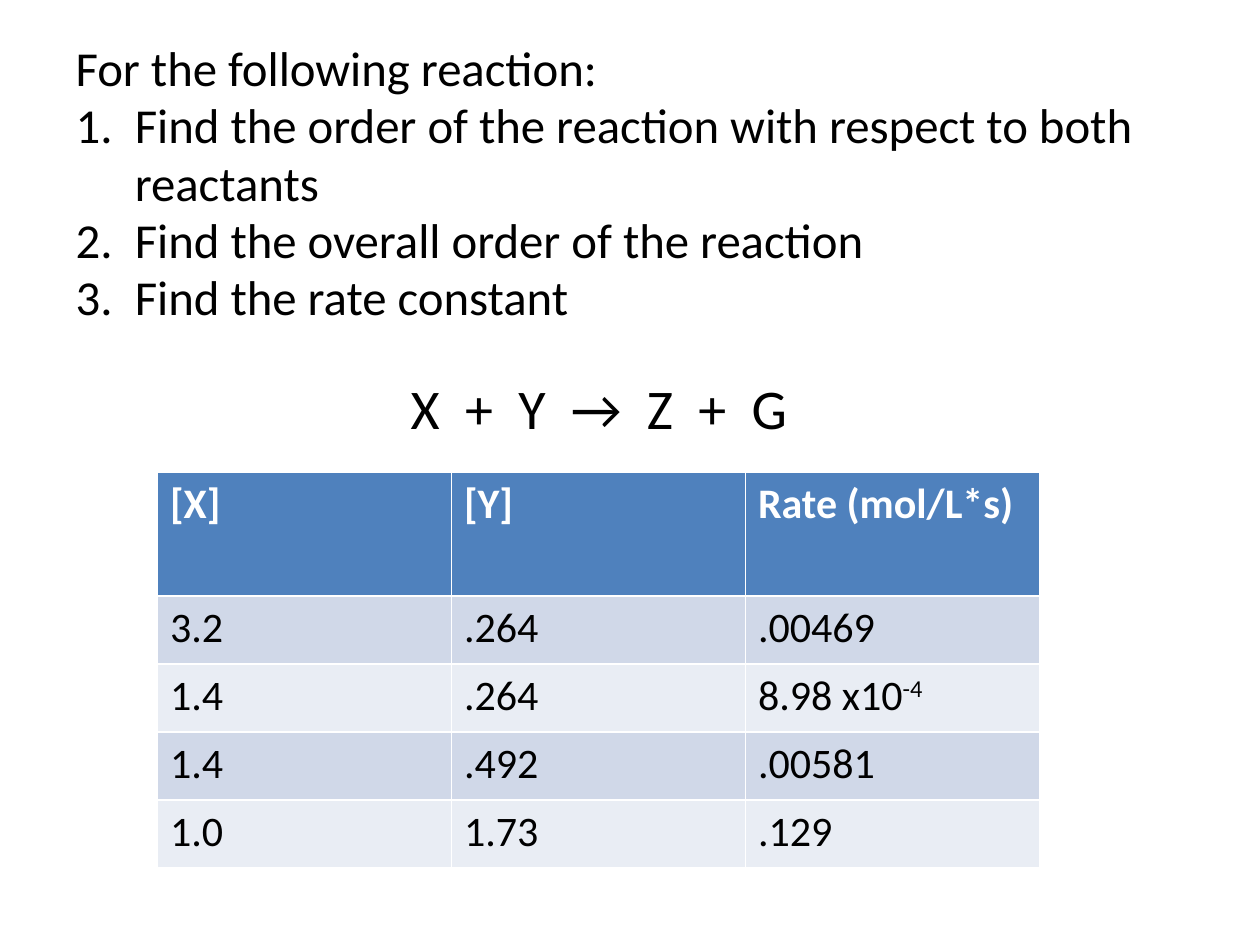
from dataclasses import dataclass

from lxml import etree
from pptx import Presentation
from pptx.dml.color import RGBColor
from pptx.enum.text import MSO_ANCHOR, MSO_AUTO_SIZE, PP_ALIGN
from pptx.oxml.ns import qn
from pptx.util import Inches, Pt

LEFT, CENTER = PP_ALIGN.LEFT, PP_ALIGN.CENTER
BOTTOM = MSO_ANCHOR.BOTTOM
NO_FIT = MSO_AUTO_SIZE.NONE
GROW = MSO_AUTO_SIZE.SHAPE_TO_FIT_TEXT

COLORS = {"ink": "000000", "paper": "FFFFFF", "header": "4F81BD",
          "odd": "D0D8E8", "even": "E9EDF4"}
FONT = "Calibri"
SLIDE_W, SLIDE_H = Inches(10), Inches(7.5)
NUMBER_INDENT = Inches(0.47)
HEADER_H, ROW_H = Inches(0.98), Inches(0.54)


@dataclass(frozen=True)
class Area:
    left: float
    top: float
    width: float
    height: float

    def box(self) -> tuple[int, int, int, int]:
        return (int(self.left * SLIDE_W), int(self.top * SLIDE_H),
                int(self.width * SLIDE_W), int(self.height * SLIDE_H))


@dataclass(frozen=True)
class Trial:
    x: str
    y: str
    rate: str
    exponent: str = ""


TASK_AREA = Area(0.05, 0.09, 0.9, 0.267)
EQUATION_AREA = Area(0.242, 0.389, 0.467, 0.085)
TABLE_AREA = Area(0.125, 0.5, 0.7, 0.42)

INTRO = "For the following reaction:"
TASKS = [
    "Find the order of the reaction with respect to both reactants",
    "Find the overall order of the reaction",
    "Find the rate constant",
]
EQUATION = "X  +  Y  →  Z  +  G"
HEADINGS = Trial("[X]", "[Y]", "Rate (mol/L*s)")
TRIALS = [
    Trial("3.2", ".264", ".00469"),
    Trial("1.4", ".264", "8.98 x10", "-4"),
    Trial("1.4", ".492", ".00581"),
    Trial("1.0", "1.73", ".129"),
]


def format_runs(paragraph, size: float, color: str = "ink", bold: bool = False) -> None:
    for run in paragraph.runs:
        run.font.name = FONT
        run.font.size = Pt(size)
        run.font.bold = bold
        run.font.color.rgb = RGBColor.from_string(COLORS[color])


def number_paragraph(paragraph) -> None:
    properties = paragraph._p.get_or_add_pPr()
    properties.set("marL", str(NUMBER_INDENT))
    properties.set("indent", str(-NUMBER_INDENT))
    etree.SubElement(properties, qn("a:buFont"), typeface="+mj-lt")
    etree.SubElement(properties, qn("a:buAutoNum"), type="arabicPeriod")


def draw_tasks(slide) -> None:
    title = slide.shapes.title
    title.left, title.top, title.width, title.height = TASK_AREA.box()
    frame = title.text_frame
    frame.word_wrap = True
    frame.auto_size = NO_FIT
    frame.vertical_anchor = BOTTOM
    frame.margin_bottom = Inches(0.08)
    frame.text = "\n".join([INTRO, *TASKS])
    for position, paragraph in enumerate(frame.paragraphs):
        paragraph.alignment = LEFT
        paragraph.line_spacing = 0.98
        format_runs(paragraph, 27.9)
        if position:
            number_paragraph(paragraph)


def draw_equation(slide) -> None:
    frame = slide.shapes.add_textbox(*EQUATION_AREA.box()).text_frame
    frame.word_wrap = True
    frame.auto_size = GROW
    frame.text = EQUATION
    equation = frame.paragraphs[0]
    equation.alignment = CENTER
    format_runs(equation, 32)


def fill_row(cells, trial: Trial, fill: str, color: str, bold: bool) -> None:
    for cell, value in zip(cells, (trial.x, trial.y, trial.rate)):
        cell.fill.solid()
        cell.fill.fore_color.rgb = RGBColor.from_string(COLORS[fill])
        cell.text_frame.text = value
    rate = cells[-1].text_frame.paragraphs[0]
    if trial.exponent:
        exponent = rate.add_run()
        exponent.text = trial.exponent
        exponent.font._element.set("baseline", "30000")
    for cell in cells:
        format_runs(cell.text_frame.paragraphs[0], 24, color, bold)


def draw_trials(slide) -> None:
    table = slide.shapes.add_table(len(TRIALS) + 1, 3, *TABLE_AREA.box()).table
    for position, trial in enumerate([HEADINGS, *TRIALS]):
        row = table.rows[position]
        is_header = position == 0
        row.height = HEADER_H if is_header else ROW_H
        band = "odd" if position % 2 else "even"
        fill_row(list(row.cells), trial, "header" if is_header else band,
                 "paper" if is_header else "ink", is_header)


def main() -> None:
    presentation = Presentation()
    presentation.slide_width, presentation.slide_height = SLIDE_W, SLIDE_H
    slide = presentation.slides.add_slide(presentation.slide_layouts[5])
    draw_tasks(slide)
    draw_trials(slide)
    draw_equation(slide)
    presentation.save("out.pptx")


if __name__ == "__main__":
    main()
